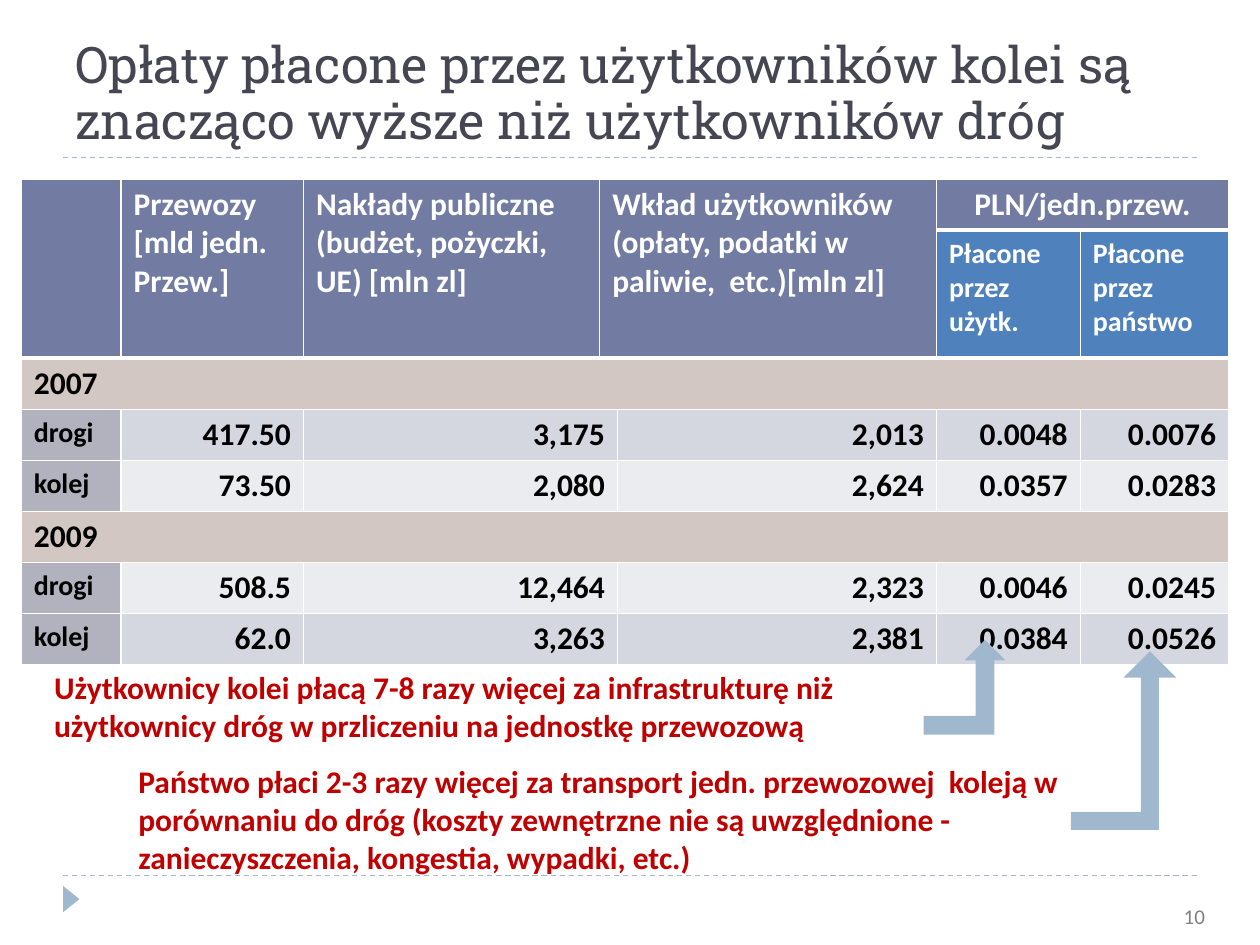
import pptx
import pptx.util
import pptx.dml.color
import pptx.enum.dml
import pptx.enum.shapes
import pptx.enum.text
import pptx.oxml
from lxml import etree

Cm, Pt = pptx.util.Cm, pptx.util.Pt
ALIGN = pptx.enum.text.PP_ALIGN
SHAPE = pptx.enum.shapes.MSO_SHAPE
NS = "http://schemas.openxmlformats.org/drawingml/2006/main"


def color(hex_code):
    return pptx.dml.color.RGBColor.from_string(hex_code)


def write(frame, text, size, hex_code, bold=True, align=ALIGN.LEFT, font="Calibri"):
    frame.word_wrap = True
    paragraph = frame.paragraphs[0]
    paragraph.alignment = align
    run = paragraph.add_run()
    run.text = text
    run.font.name = font
    run.font.size = Pt(size)
    run.font.bold = bold
    run.font.color.rgb = color(hex_code)


deck = pptx.Presentation()
deck.slide_width, deck.slide_height = Cm(25.4), Cm(19.05)
slide = deck.slides.add_slide(deck.slide_layouts[5])
shapes = slide.shapes

# Dashed rules under the title and above the footer
for y in (17.65, 3.18):
    rule = shapes.add_connector(pptx.enum.shapes.MSO_CONNECTOR.STRAIGHT,
                                Cm(1.27), Cm(y), Cm(24.13), Cm(y))
    rule.line.color.rgb = color("9FB8CD")
    rule.line.width = Pt(0.75)
    rule.line.dash_style = pptx.enum.dml.MSO_LINE.DASH
    etree.SubElement(rule._element.spPr, f"{{{NS}}}effectLst")

# Title
title = shapes.title
title.left, title.top, title.width, title.height = Cm(1.27), Cm(0.43), Cm(22.86), Cm(2.74)
title.text_frame.auto_size = pptx.enum.text.MSO_AUTO_SIZE.NONE
title.text_frame.vertical_anchor = pptx.enum.text.MSO_ANCHOR.BOTTOM
write(title.text_frame,
      "Opłaty płacone przez użytkowników kolei są znacząco wyższe niż użytkowników dróg",
      28.8, "464653", bold=False, font="Roboto Slab")
title.text_frame.paragraphs[0].line_spacing = 0.93

# Cost table: the narrow fourth column lets header and data split differently
column_widths = [2.01, 3.68, 5.97, 0.36, 6.43, 2.9, 2.99]
row_heights = [1.03, 2.55] + [1.03] * 6
costs = shapes.add_table(8, 7, Cm(0.43), Cm(3.61),
                         Cm(sum(column_widths)), Cm(sum(row_heights))).table
costs.first_row = costs.horz_banding = False
for column, width in zip(costs.columns, column_widths):
    column.width = Cm(width)
for row, height in zip(costs.rows, row_heights):
    row.height = Cm(height)

# White borders, heavier below the two header rows
for r in range(8):
    for c in range(7):
        properties = costs.cell(r, c)._tc.get_or_add_tcPr()
        weights = {"L": 1, "R": 1, "T": 3 if r in (1, 2) else 1, "B": 3 if r < 2 else 1}
        for side, weight in weights.items():
            properties.append(pptx.oxml.parse_xml(
                f'<a:ln{side} xmlns:a="{NS}" w="{Pt(weight)}"><a:solidFill>'
                f'<a:srgbClr val="FFFFFF"/></a:solidFill></a:ln{side}>'))

# Merged areas: first row, first column, last row, last column
merges = [(0, 0, 1, 0), (0, 1, 1, 1), (0, 2, 1, 2), (0, 3, 1, 4), (0, 5, 0, 6),
          (2, 0, 2, 6), (5, 0, 5, 6)]
merges += [(r, 2, r, 3) for r in (3, 4, 6, 7)]
for top, left, bottom, right in merges:
    costs.cell(top, left).merge(costs.cell(bottom, right))

# Cell contents: row, column, text, size, text colour, fill, alignment
entries = [(0, c, text, 18, "FFFFFF", "727CA3", align) for c, text, align in [
    (0, "", ALIGN.LEFT),
    (1, "Przewozy [mld jedn. Przew.]", ALIGN.LEFT),
    (2, "Nakłady publiczne (budżet, pożyczki, UE) [mln zl]", ALIGN.LEFT),
    (3, "Wkład użytkowników (opłaty, podatki w paliwie,  etc.)[mln zl]", ALIGN.LEFT),
    (5, "PLN/jedn.przew.", ALIGN.CENTER)]]
entries += [(1, c, text, 16, "FFFFFF", "4F81BD", ALIGN.LEFT) for c, text in [
    (5, "Płacone przez użytk."), (6, "Płacone przez państwo")]]
entries += [(r, 0, year, 18, "000000", "D2C7C3", ALIGN.LEFT)
            for r, year in [(2, "2007"), (5, "2009")]]
transport_rows = [
    (3, "drogi", "D5D7E0", ["417.50", "3,175", "2,013", "0.0048", "0.0076"]),
    (4, "kolej", "EBECF0", ["73.50", "2,080", "2,624", "0.0357", "0.0283"]),
    (6, "drogi", "EBECF0", ["508.5", "12,464", "2,323", "0.0046", "0.0245"]),
    (7, "kolej", "D5D7E0", ["62.0", "3,263", "2,381", "0.0384", "0.0526"])]
for r, mode, band, values in transport_rows:
    entries.append((r, 0, mode, 16, "000000", "B2B2BE", ALIGN.LEFT))
    entries += [(r, c, value, 18, "000000", band, ALIGN.RIGHT)
                for c, value in zip((1, 2, 4, 5, 6), values)]
for r, c, text, size, text_color, fill, align in entries:
    cell = costs.cell(r, c)
    cell.fill.solid()
    cell.fill.fore_color.rgb = color(fill)
    if text:
        write(cell.text_frame, text, size, text_color, align=align)

# Conclusions and page number
notes = [
    (0.84, 13.34, 18.42, 1.8, 18, "C00000", True, ALIGN.LEFT,
     "Użytkownicy kolei płacą 7-8 razy więcej za infrastrukturę niż użytkownicy dróg "
     "w przliczeniu na jednostkę przewozową"),
    (2.54, 15.24, 19.25, 2.57, 18, "C00000", True, ALIGN.LEFT,
     "Państwo płaci 2-3 razy więcej za transport jedn. przewozowej  koleją w porównaniu "
     "do dróg (koszty zewnętrzne nie są uwzględnione - zanieczyszczenia, kongestia, "
     "wypadki, etc.)"),
    (18.62, 18.08, 5.92, 1.02, 12, "808080", False, ALIGN.RIGHT, "10")]
for x, y, width, height, size, text_color, bold, align, text in notes:
    note = shapes.add_textbox(Cm(x), Cm(y), Cm(width), Cm(height))
    write(note.text_frame, text, size, text_color, bold, align)

# Arrows to the unit costs and the footer marker
markers = [
    (SHAPE.BENT_UP_ARROW, 18.62, 12.9, 1.65, 1.91, 0, [0.23, 0.25, 0.25]),
    (SHAPE.BENT_UP_ARROW, 21.59, 13.13, 2.12, 3.6, 0, [0.17, 0.25, 0.25]),
    (SHAPE.ISOSCELES_TRIANGLE, 1.17, 17.96, 0.53, 0.33, 90, [0.5])]
for kind, x, y, width, height, rotation, adjustments in markers:
    marker = shapes.add_shape(kind, Cm(x), Cm(y), Cm(width), Cm(height))
    marker.rotation = rotation
    for i, value in enumerate(adjustments):
        marker.adjustments[i] = value
    marker.fill.solid()
    marker.fill.fore_color.rgb = color("9FB8CD")
    marker.line.fill.background()
    marker.shadow.inherit = False

deck.save("out.pptx")
